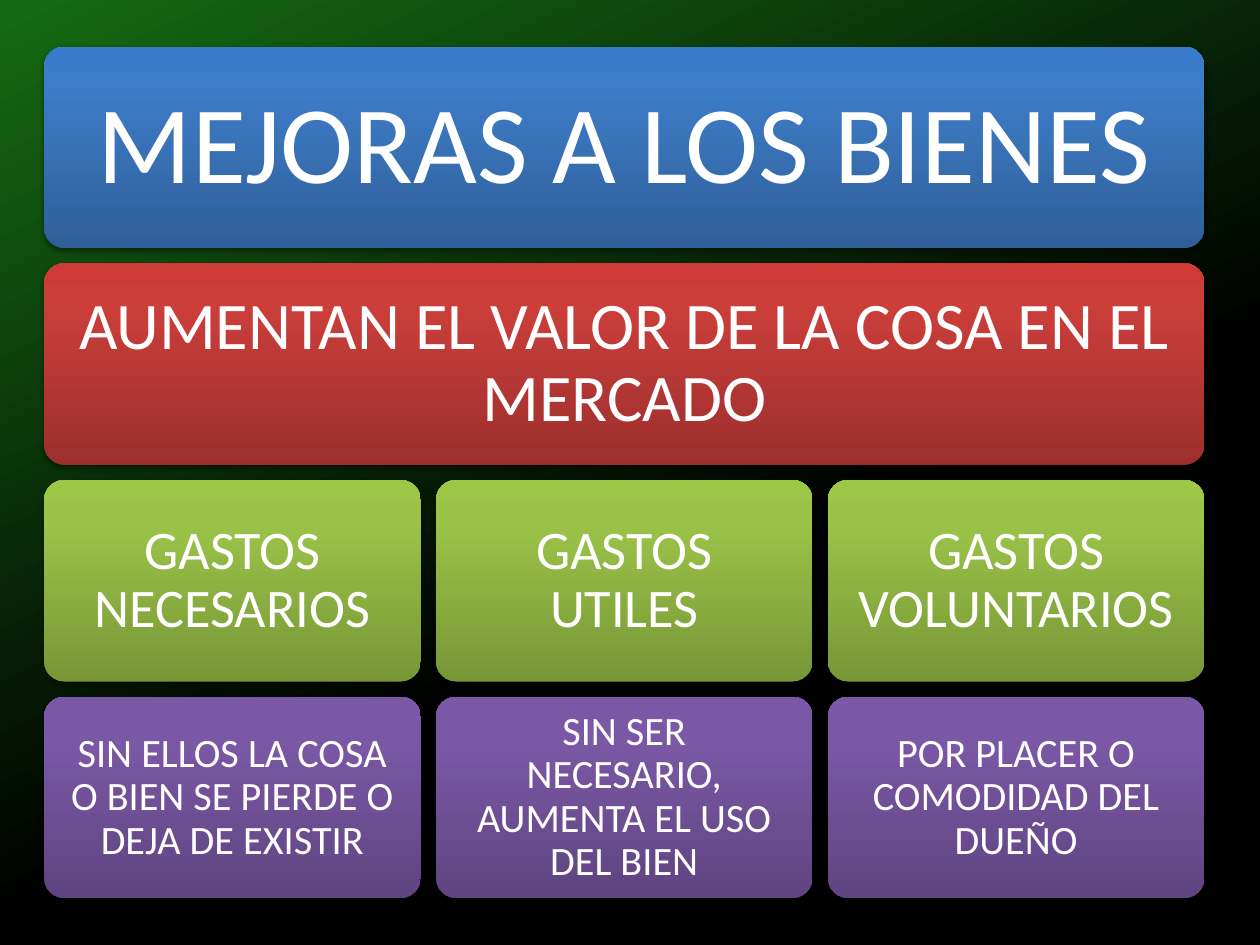
from dataclasses import dataclass

from lxml.etree import SubElement
from pptx import Presentation
from pptx.dml.color import RGBColor
from pptx.enum.shapes import MSO_SHAPE
from pptx.enum.text import MSO_ANCHOR, MSO_AUTO_SIZE, PP_ALIGN
from pptx.oxml.ns import qn
from pptx.util import Inches, Pt

Stops = tuple[tuple[int, str], ...]


@dataclass(frozen=True)
class Theme:
    font: str = "Calibri"
    text: str = "FFFFFF"
    shadow: str = "000000"
    background: Stops = ((40, "000000"), (100, "156B13"))
    blue: Stops = ((0, "2F5F99"), (80, "3D7CC7"), (100, "3A7CCB"))
    red: Stops = ((0, "9C2F2D"), (80, "CB3E3A"), (100, "CE3B37"))
    green: Stops = ((0, "779737"), (80, "9BC348"), (100, "9DC746"))
    purple: Stops = ((0, "5F4480"), (80, "7B58A6"), (100, "7C57A8"))
    title_size: int = 63
    statement_size: int = 38
    category_size: int = 31
    detail_size: int = 23


@dataclass(frozen=True)
class Row:
    texts: tuple[str, ...]
    stops: Stops
    size: int
    margin: float


THEME = Theme()
LEFT, TOP, WIDTH = 0.35, 0.37, 9.21
ROW_HEIGHT, GAP = 1.6, 0.12

ROWS = (
    Row(("MEJORAS A LOS BIENES",), THEME.blue, THEME.title_size, 0.31),
    Row(("AUMENTAN EL VALOR DE LA COSA EN EL MERCADO",),
        THEME.red, THEME.statement_size, 0.21),
    Row(("GASTOS NECESARIOS", "GASTOS UTILES", "GASTOS VOLUNTARIOS"),
        THEME.green, THEME.category_size, 0.18),
    Row(("SIN ELLOS LA COSA O BIEN SE PIERDE O DEJA DE EXISTIR",
         "SIN SER NECESARIO, AUMENTA EL USO DEL BIEN",
         "POR PLACER O COMODIDAD DEL DUEÑO"),
        THEME.purple, THEME.detail_size, 0.15),
)


def apply_gradient(fill, owner, stops: Stops, angle: int) -> None:
    """Fill with any number of stops; the angle runs counter-clockwise."""
    fill.gradient()
    fill.gradient_angle = angle
    stop_list = owner.find(".//" + qn("a:gsLst"))
    for stop in list(stop_list):
        stop_list.remove(stop)
    for position, color in stops:
        stop = SubElement(stop_list, qn("a:gs"), pos=str(position * 1000))
        SubElement(stop, qn("a:srgbClr"), val=color)


def add_shadow(shape) -> None:
    shape.shadow.inherit = False
    effects = shape._element.spPr.find(qn("a:effectLst"))
    shadow = SubElement(effects, qn("a:outerShdw"), blurRad=str(Pt(3.1)),
                        dist=str(Pt(1.6)), dir="5400000", rotWithShape="0")
    color = SubElement(shadow, qn("a:srgbClr"), val=THEME.shadow)
    SubElement(color, qn("a:alpha"), val="38000")


def add_card(slide, box: tuple[float, ...], stops: Stops):
    card = slide.shapes.add_shape(MSO_SHAPE.ROUNDED_RECTANGLE, *map(Inches, box))
    card.adjustments[0] = 0.1
    apply_gradient(card.fill, card._element, stops, 90)
    card.line.fill.background()
    add_shadow(card)
    return card


def write_text(shape, text: str, row: Row) -> None:
    frame = shape.text_frame
    frame.text = text
    frame.word_wrap = True
    frame.auto_size = MSO_AUTO_SIZE.NONE
    frame.vertical_anchor = MSO_ANCHOR.MIDDLE
    frame.margin_left = frame.margin_right = Inches(row.margin)
    frame.margin_top = frame.margin_bottom = Inches(row.margin)
    paragraph = frame.paragraphs[0]
    paragraph.alignment = PP_ALIGN.CENTER
    paragraph.line_spacing = 0.9
    font = paragraph.runs[0].font
    font.name = THEME.font
    font.size = Pt(row.size)
    font.color.rgb = RGBColor.from_string(THEME.text)


def place_title(slide, box: tuple[float, ...]):
    """Lay the title placeholder over its card."""
    title = slide.shapes.title
    title.left, title.top, title.width, title.height = map(Inches, box)
    slide.shapes._spTree.append(title._element)
    return title


def main() -> None:
    presentation = Presentation()
    presentation.slide_width, presentation.slide_height = Inches(10), Inches(7.5)
    slide = presentation.slides.add_slide(presentation.slide_layouts[5])

    # Background
    background = slide.background
    apply_gradient(background.fill, slide._element, THEME.background, 115)

    # Rows of equal cards; the first one carries the title
    for row_index, row in enumerate(ROWS):
        count = len(row.texts)
        card_width = (WIDTH - GAP * (count - 1)) / count
        top = TOP + row_index * (ROW_HEIGHT + GAP)
        for column, text in enumerate(row.texts):
            left = LEFT + column * (card_width + GAP)
            box = (left, top, card_width, ROW_HEIGHT)
            holder = add_card(slide, box, row.stops)
            if row_index == 0:
                holder = place_title(slide, box)
            write_text(holder, text, row)

    presentation.save("out.pptx")


if __name__ == "__main__":
    main()
